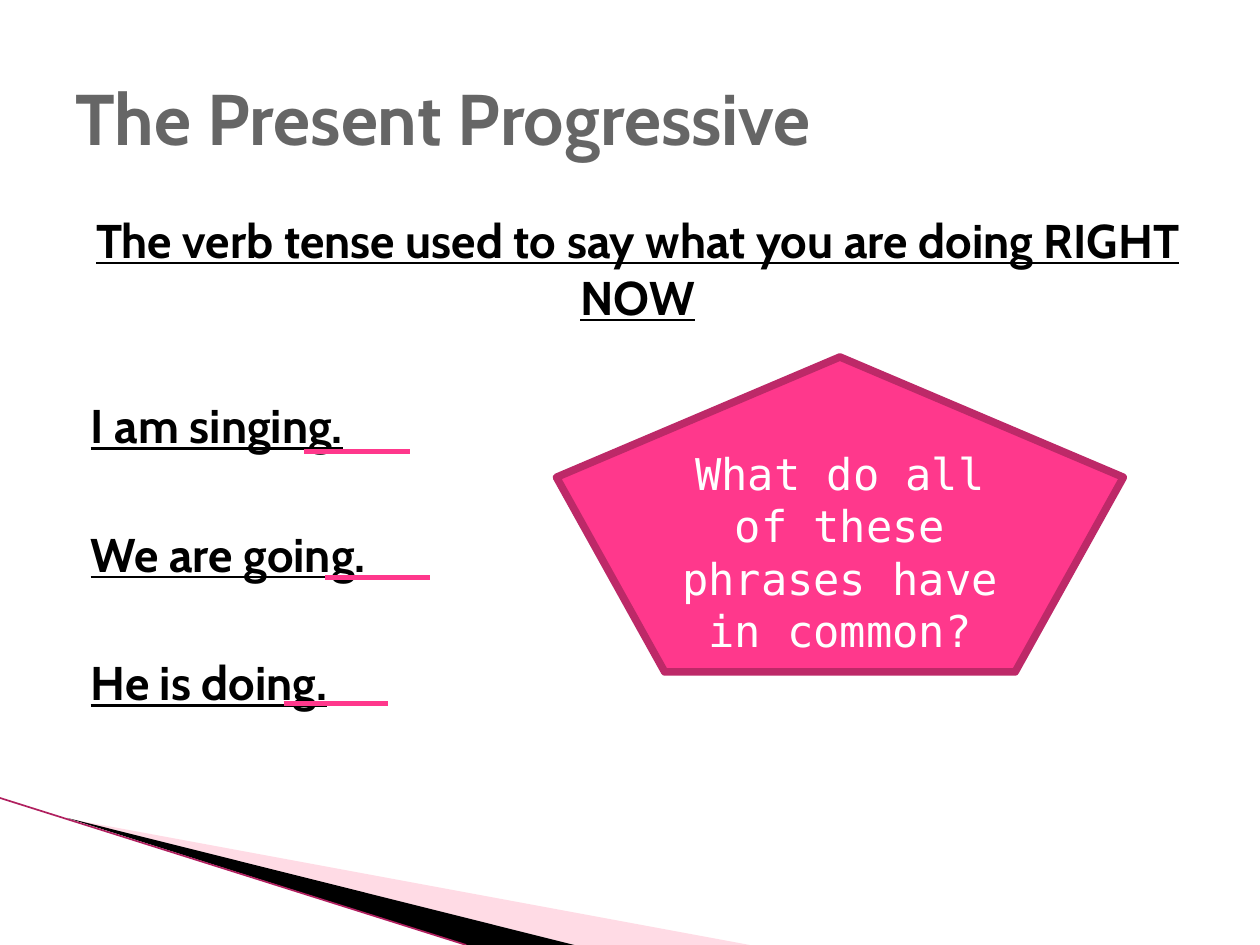
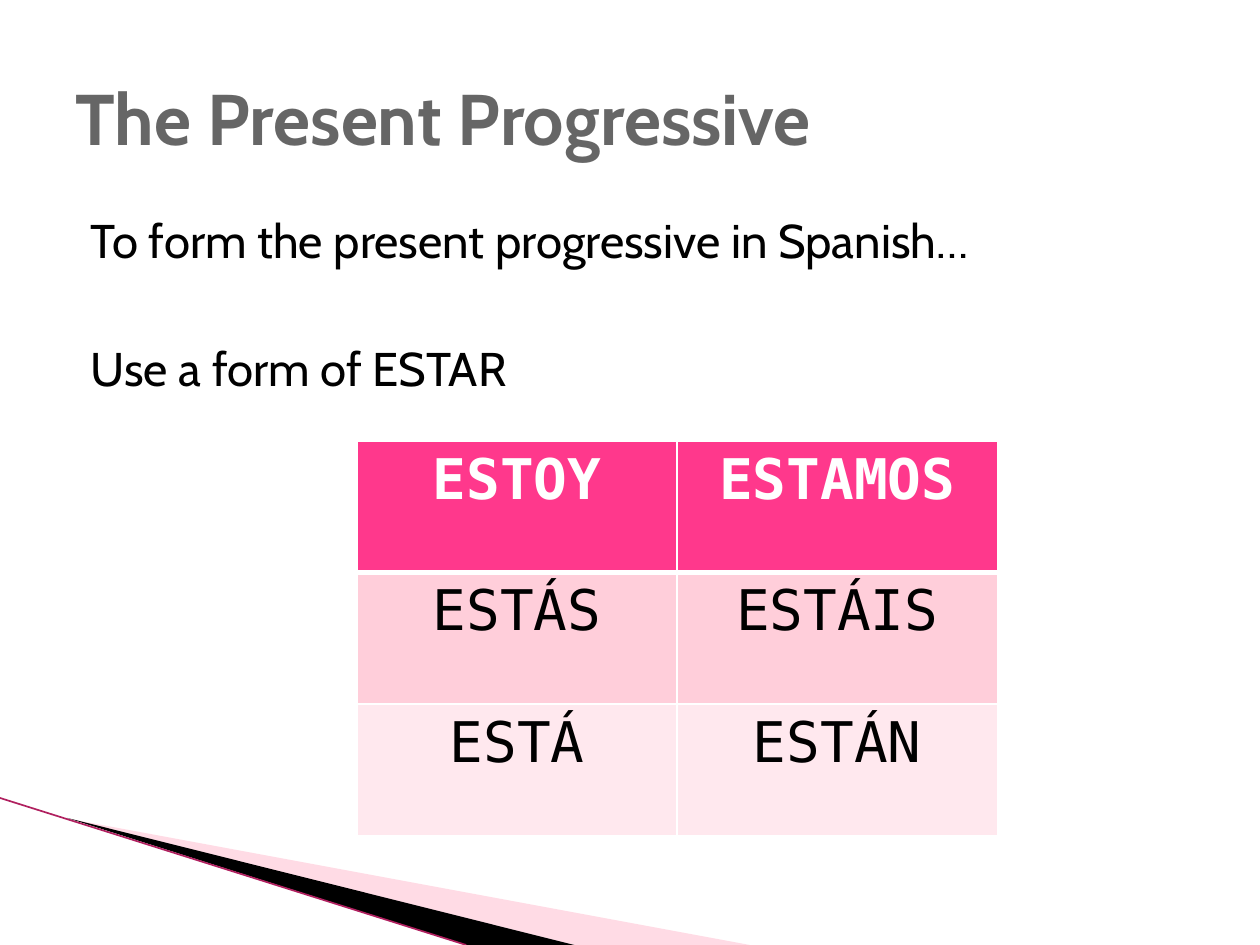
from lxml import etree
from pptx import Presentation
from pptx.dml.color import RGBColor
from pptx.enum.shapes import MSO_CONNECTOR, MSO_SHAPE
from pptx.enum.text import MSO_ANCHOR, MSO_AUTO_SIZE, PP_ALIGN
from pptx.oxml.ns import qn
from pptx.util import Inches, Pt

LEFT, CENTER = PP_ALIGN.LEFT, PP_ALIGN.CENTER
MIDDLE, TOP = MSO_ANCHOR.MIDDLE, MSO_ANCHOR.TOP
NO_FIT = MSO_AUTO_SIZE.NONE
STRAIGHT = MSO_CONNECTOR.STRAIGHT
PENTAGON = MSO_SHAPE.REGULAR_PENTAGON

COLORS = {
    "white": "FFFFFF", "black": "000000", "title": "666666",
    "pink": "FF388C", "rim": "BD2968", "wedge": "FFA5BF", "edge": "B0205F",
    "band1": "FFCEDA", "band2": "FFE8EE",
}
TITLE = {"name": "Cabin", "size": Pt(41), "bold": True, "color": "title"}
BODY = {"name": "Cabin", "size": Pt(27), "bold": False, "color": "black"}
STRONG = {**BODY, "bold": True, "underline": True}
CALLOUT = {"name": "DejaVu Sans Mono", "size": Pt(25), "color": "white"}
CELL = {"name": "DejaVu Sans Mono", "size": Pt(32), "bold": False,
        "color": "black"}
HEAD = {**CELL, "bold": True, "color": "white"}

COLS, ROWS = 120, 90    # grid over the whole slide
WIDTH, HEIGHT = Inches(10), Inches(7.5)
LINE_GAP = Pt(41)       # one open line between body paragraphs


def rgb(name):
    return RGBColor.from_string(COLORS[name])


def col(n):
    return round(WIDTH * n / COLS)


def row(n):
    return round(HEIGHT * n / ROWS)


def box(x, y, w, h):
    return col(x), row(y), col(w), row(h)


def format_font(font, style):
    for key, value in style.items():
        if key == "color":
            font.color.rgb = rgb(value)
        else:
            setattr(font, key, value)


def set_text(p, text, style, align=LEFT):
    r = p.add_run()
    r.text = text
    p.alignment = align
    format_font(r.font, style)


def place(sp, area, anchor):
    sp.left, sp.top, sp.width, sp.height = area
    tf = sp.text_frame
    tf.word_wrap = True
    tf.auto_size = NO_FIT
    tf.vertical_anchor = anchor
    return tf


# Shared slide parts
def add_line(slide, start, end, color, width):
    line = slide.shapes.add_connector(
        STRAIGHT, col(start[0]), row(start[1]), col(end[0]), row(end[1]))
    line.line.color.rgb = rgb(color)
    line.line.width = Pt(width)
    etree.SubElement(line.element.spPr, qn("a:effectLst"))


def add_wedge(slide, points, color, opacity=100):
    start, *rest = [(col(x), row(y)) for x, y in points]
    builder = slide.shapes.build_freeform(*start)
    builder.add_line_segments(rest)
    sp = builder.convert_to_shape()
    sp.shadow.inherit = False
    sp.line.fill.background()
    sp.fill.solid()
    sp.fill.fore_color.rgb = rgb(color)
    if opacity < 100:
        clr = sp.element.spPr.find(f".//{qn('a:srgbClr')}")
        etree.SubElement(clr, qn("a:alpha"), val=str(opacity * 1000))


def add_corner_sweep(slide):
    add_wedge(slide, [(6.6, 78), (71.4, ROWS), (54.7, ROWS)], "wedge", 40)
    add_wedge(slide, [(6.4, 77.9), (54.7, ROWS), (44.4, ROWS)], "black")
    add_line(slide, (0, 76), (44.4, ROWS), "edge", 0.95)


def new_slide(prs, title):
    slide = prs.slides.add_slide(prs.slide_layouts[1])
    add_corner_sweep(slide)
    tf = place(slide.shapes.title, box(6, 3.6, 108, 15), MIDDLE)
    set_text(tf.paragraphs[0], title, TITLE)
    return slide


# Content parts
def fill_body(slide, rows, lines, style):
    """Lines are (text, alignment) pairs."""
    tf = place(slide.placeholders[1], box(6, 19.5, 108, rows), TOP)
    for i, (text, align) in enumerate(lines):
        p = tf.add_paragraph() if i else tf.paragraphs[0]
        pPr = p._p.get_or_add_pPr()
        pPr.set("marL", str(Inches(0.12)))
        pPr.set("indent", "0")
        etree.SubElement(pPr, qn("a:buNone"))
        p.space_before = LINE_GAP if i else Pt(0)
        set_text(p, text, style, align)


def add_callout(slide, area, text):
    sp = slide.shapes.add_shape(PENTAGON, *area)
    sp.shadow.inherit = False
    sp.fill.solid()
    sp.fill.fore_color.rgb = rgb("pink")
    sp.line.color.rgb = rgb("rim")
    sp.line.width = Pt(4.33)
    tf = place(sp, area, MIDDLE)
    set_text(tf.paragraphs[0], text, CALLOUT, CENTER)


def set_borders(cell, widths):
    tcPr = cell._tc.get_or_add_tcPr()
    for i, (side, width) in enumerate(widths.items()):
        ln = etree.Element(qn(f"a:ln{side}"), w=str(Pt(width)))
        fill = etree.SubElement(ln, qn("a:solidFill"))
        etree.SubElement(fill, qn("a:srgbClr"), val=COLORS["white"])
        tcPr.insert(i, ln)


def add_verb_table(slide, area, forms):
    table = slide.shapes.add_table(len(forms), len(forms[0]), *area).table
    fills = ["pink", "band1", "band2"]
    for i, words in enumerate(forms):
        for j, word in enumerate(words):
            cell = table.cell(i, j)
            cell.fill.solid()
            cell.fill.fore_color.rgb = rgb(fills[i])
            set_borders(cell, {"L": 1, "R": 1, "T": 3 if i == 1 else 1,
                               "B": 3 if i == 0 else 1})
            set_text(cell.text_frame.paragraphs[0], word,
                     CELL if i else HEAD, CENTER)


def main():
    prs = Presentation()
    prs.slide_width, prs.slide_height = WIDTH, HEIGHT
    title = "The Present Progressive"

    # Meaning of the tense, with the endings underlined
    slide = new_slide(prs, title)
    fill_body(slide, 59.4, [
        ("The verb tense used to say what you are doing RIGHT NOW", CENTER),
        ("I am singing.", LEFT),
        ("We are going.", LEFT),
        ("He is doing.", LEFT),
    ], STRONG)
    add_callout(slide, box(53, 34, 54, 30),
                "What do all of these phrases have in common?")
    for i, x in enumerate([29, 31, 27]):
        y = 43 + 12 * i
        add_line(slide, (x, y), (x + 10, y), "pink", 3)

    # Forms of estar
    slide = new_slide(prs, title)
    fill_body(slide, 21.6, [
        ("To form the present progressive in Spanish…", LEFT),
        ("Use a form of ESTAR", LEFT),
    ], BODY)
    add_verb_table(slide, box(34, 42, 61, 37.6), [
        ("ESTOY", "ESTAMOS"),
        ("ESTÁS", "ESTÁIS"),
        ("ESTÁ", "ESTÁN"),
    ])

    prs.save("out.pptx")


if __name__ == "__main__":
    main()
